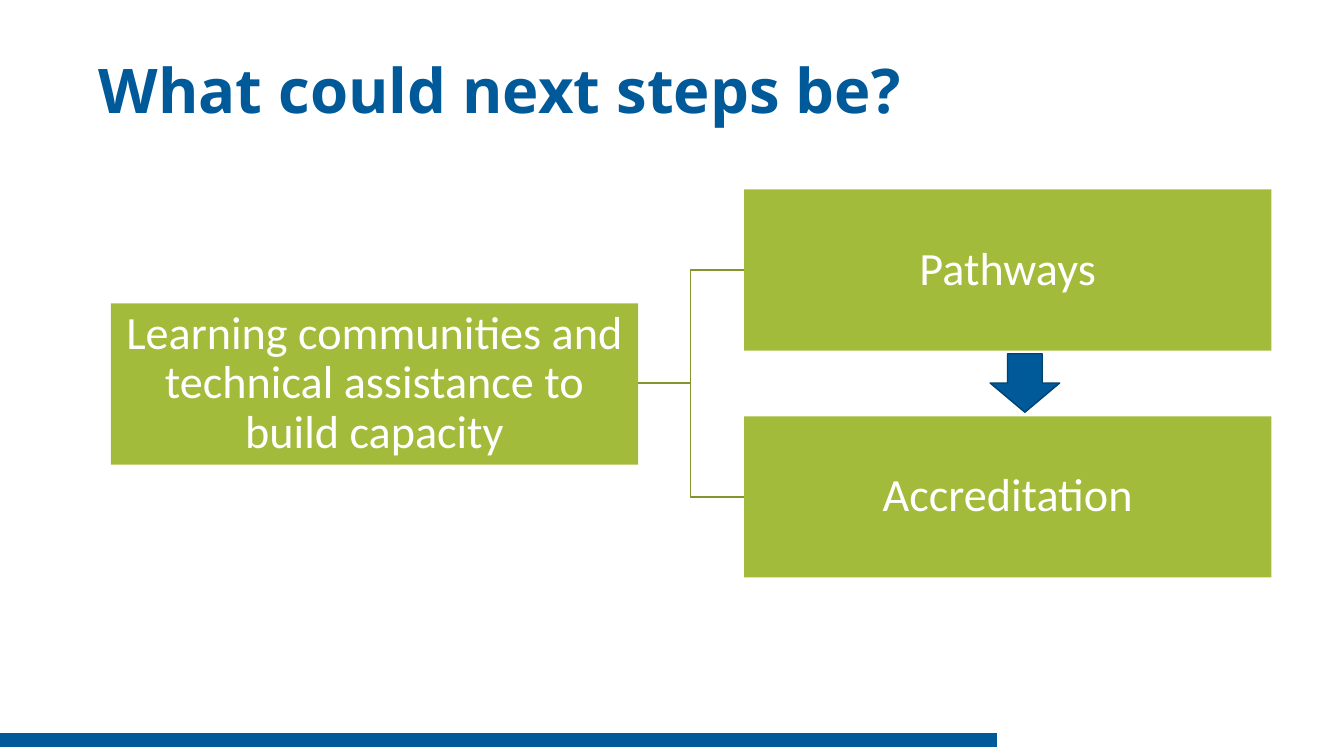
import pptx
import pptx.dml.color
import pptx.enum.shapes
import pptx.enum.text
import pptx.oxml.ns
import pptx.util
from lxml import etree

BLUE = pptx.dml.color.RGBColor(0x00, 0x59, 0x98)
DARK_BLUE = pptx.dml.color.RGBColor(0x00, 0x42, 0x70)
GREEN = pptx.dml.color.RGBColor(0xA2, 0xBB, 0x3A)
OLIVE = pptx.dml.color.RGBColor(0x82, 0x96, 0x2E)
WHITE = pptx.dml.color.RGBColor(0xFF, 0xFF, 0xFF)

EMU_PER_PX = 9144  # 100 px to the inch
BOX_WIDTH, BOX_HEIGHT = 523, 160
LEFT_COLUMN, RIGHT_COLUMN = 110, 738
CENTER_Y = 380
ROW_OFFSET = 112


def px(length):
    return pptx.util.Emu(length * EMU_PER_PX)


class SlideBuilder:
    heading_font = "Open Sans"
    body_font = "Calibri"

    def __init__(self, slide):
        self.shapes = slide.shapes

    def add_text(self, shape, text, font_name, size, color, alignment, inset, bold=False):
        frame = shape.text_frame
        frame.word_wrap = True
        frame.vertical_anchor = pptx.enum.text.MSO_ANCHOR.MIDDLE
        frame.margin_left = frame.margin_right = px(inset[0])
        frame.margin_top = frame.margin_bottom = px(inset[1])
        paragraph = frame.paragraphs[0]
        paragraph.alignment = alignment
        paragraph.line_spacing = 0.9
        run = paragraph.add_run()
        run.text = text
        run.font.name = font_name
        run.font.size = pptx.util.Pt(size)
        run.font.bold = bold
        run.font.color.rgb = color

    def title(self, text, left, top, width, height):
        box = self.shapes.add_textbox(px(left), px(top), px(width), px(height))
        self.add_text(box, text, self.heading_font, 44, BLUE,
                      pptx.enum.text.PP_ALIGN.LEFT, (10, 5), bold=True)

    def preset(self, kind, left, top, width, height, fill, line=None):
        shape = self.shapes.add_shape(kind, px(left), px(top), px(width), px(height))
        shape.shadow.inherit = False
        shape.fill.solid()
        shape.fill.fore_color.rgb = fill
        if line is None:
            shape.line.fill.background()
        else:
            shape.line.color.rgb = line
            shape.line.width = pptx.util.Pt(1)
        return shape

    def step(self, text, left, center_y):
        box = self.preset(pptx.enum.shapes.MSO_SHAPE.RECTANGLE, left,
                          center_y - BOX_HEIGHT // 2, BOX_WIDTH, BOX_HEIGHT, GREEN)
        self.add_text(box, text, self.body_font, 33, WHITE,
                      pptx.enum.text.PP_ALIGN.CENTER, (2, 2))

    def branch(self, start_x, start_y, end_x, end_y):
        """Draw an open path that turns halfway between its two ends."""
        middle_x = (start_x + end_x) // 2
        builder = self.shapes.build_freeform(start_x, start_y, scale=EMU_PER_PX)
        builder.add_line_segments(
            [(middle_x, start_y), (middle_x, end_y), (end_x, end_y)], close=False)
        shape = builder.convert_to_shape()
        shape.shadow.inherit = False
        shape.fill.background()
        shape.line.color.rgb = OLIVE
        shape.line.width = pptx.util.Pt(1)

    def rule(self, left, right, y, weight):
        line = self.shapes.add_connector(
            pptx.enum.shapes.MSO_CONNECTOR.STRAIGHT, px(left), px(y), px(right), px(y))
        line.line.color.rgb = BLUE
        line.line.width = pptx.util.Pt(weight)
        properties = line._element.spPr
        etree.SubElement(properties, pptx.oxml.ns.qn("a:effectLst"))


def main():
    presentation = pptx.Presentation()
    presentation.slide_width = px(1333)
    presentation.slide_height = px(750)
    builder = SlideBuilder(presentation.slides.add_slide(presentation.slide_layouts[6]))

    builder.rule(0, 989, 734, 10)
    builder.title("What could next steps be?", 88, 15, 1127, 155)

    outcomes = [("Pathways", CENTER_Y - ROW_OFFSET),
                ("Accreditation", CENTER_Y + ROW_OFFSET + 1)]
    for text, center_y in outcomes:
        builder.branch(LEFT_COLUMN + BOX_WIDTH, CENTER_Y, RIGHT_COLUMN, center_y)
    builder.step("Learning communities and technical assistance to build capacity",
                 LEFT_COLUMN, CENTER_Y + 1)
    for text, center_y in outcomes:
        builder.step(text, RIGHT_COLUMN, center_y)
    builder.preset(pptx.enum.shapes.MSO_SHAPE.DOWN_ARROW, 982, 351, 69, 58,
                   BLUE, DARK_BLUE)

    presentation.save("out.pptx")


if __name__ == "__main__":
    main()
